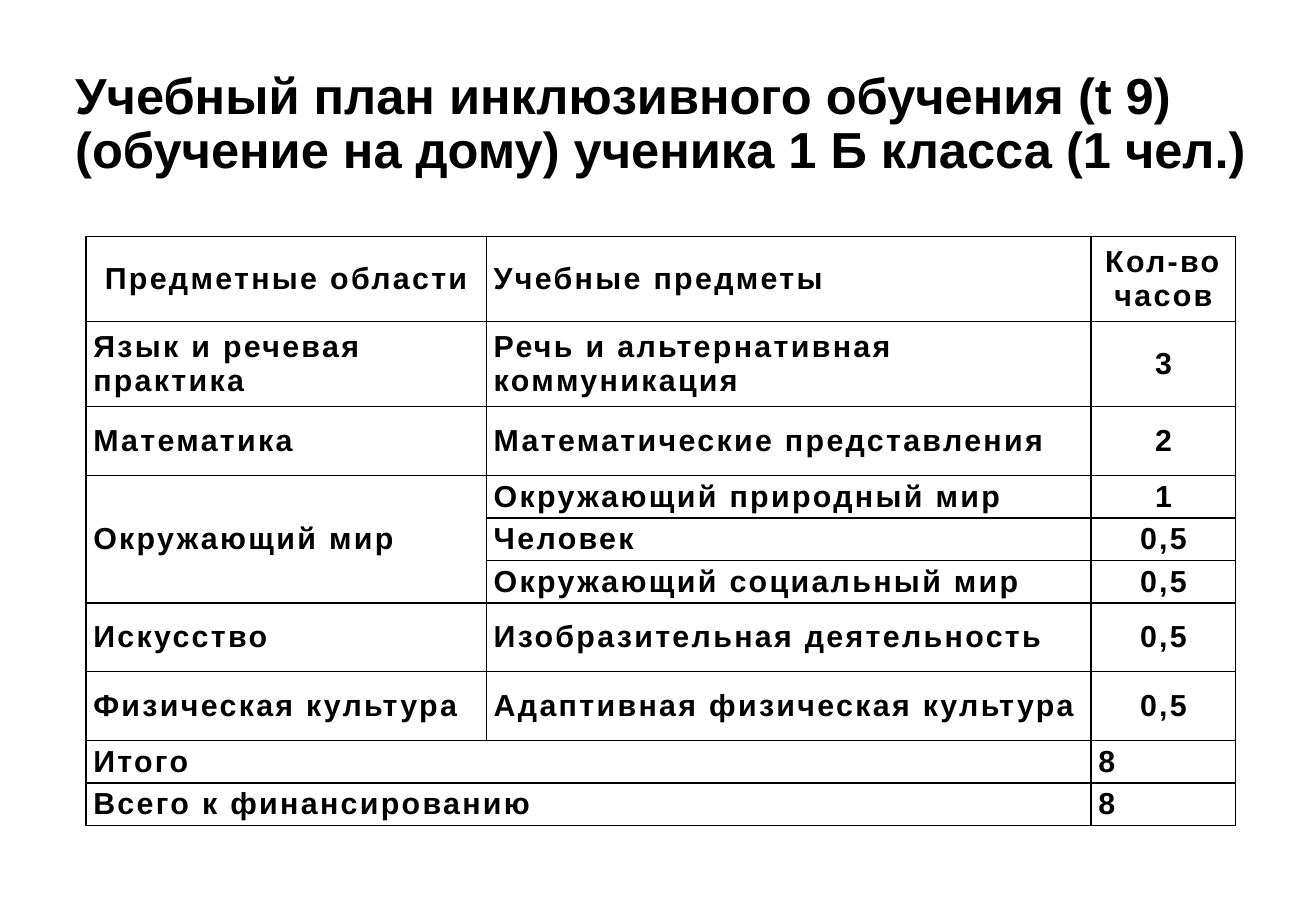
import dataclasses

import lxml.etree
import pptx
import pptx.dml.color
import pptx.enum.text
import pptx.oxml.ns
import pptx.util

Pt = pptx.util.Pt
Align = pptx.enum.text.PP_ALIGN
Anchor = pptx.enum.text.MSO_ANCHOR


@dataclasses.dataclass(frozen=True)
class Theme:
    font: str = "Arial"
    ink: str = "000000"
    title_size: float = 30
    cell_size: float = 18
    cell_spacing: float = 1.4
    cell_inset: float = 4.3
    border: float = 1


class PlanSlide:
    def __init__(self, deck, theme):
        self.theme = theme
        self.slide = deck.slides.add_slide(deck.slide_layouts[5])

    def add_text(self, paragraph, text, size, align):
        paragraph.alignment = align
        run = paragraph.add_run()
        run.text = text
        run.font.name = self.theme.font
        run.font.size = Pt(size)
        run.font.bold = True
        run.font.color.rgb = pptx.dml.color.RGBColor.from_string(self.theme.ink)
        return run

    def title(self, text, left, top, width, height):
        heading = self.slide.shapes.title
        heading.left, heading.top = Pt(left), Pt(top)
        heading.width, heading.height = Pt(width), Pt(height)
        frame = heading.text_frame
        frame.word_wrap = True
        frame.auto_size = pptx.enum.text.MSO_AUTO_SIZE.NONE
        frame.vertical_anchor = Anchor.MIDDLE
        frame.paragraphs[0].line_spacing = 0.9
        self.add_text(frame.paragraphs[0], text, self.theme.title_size, Align.LEFT)

    def outline(self, cell):
        properties = cell._tc.get_or_add_tcPr()
        for position, side in enumerate(("lnL", "lnR", "lnT", "lnB")):
            line = lxml.etree.Element(pptx.oxml.ns.qn(f"a:{side}"), w=str(Pt(self.theme.border)))
            fill = lxml.etree.SubElement(line, pptx.oxml.ns.qn("a:solidFill"))
            lxml.etree.SubElement(fill, pptx.oxml.ns.qn("a:srgbClr"), val=self.theme.ink)
            properties.insert(position, line)

    def format_cell(self, cell):
        cell.fill.background()
        cell.vertical_anchor = Anchor.MIDDLE
        cell.margin_left = cell.margin_right = Pt(self.theme.cell_inset)
        cell.margin_top = cell.margin_bottom = 0
        self.outline(cell)

    def table(self, left, top, widths, heights, rows, merges, centred):
        frame = self.slide.shapes.add_table(
            len(heights), len(widths), Pt(left), Pt(top), Pt(sum(widths)), Pt(sum(heights)))
        grid = frame.table
        grid.first_row = grid.horz_banding = False
        for column, width in zip(grid.columns, widths):
            column.width = Pt(width)
        for row, height in zip(grid.rows, heights):
            row.height = Pt(height)
        for r, row in enumerate(rows):
            for c, text in enumerate(row):
                cell = grid.cell(r, c)
                self.format_cell(cell)
                if text:
                    align = Align.CENTER if (r, c) in centred else Align.LEFT
                    run = self.add_text(cell.text_frame.paragraphs[0], text, self.theme.cell_size, align)
                    run._r.get_or_add_rPr().set("spc", str(round(self.theme.cell_spacing * 100)))
        for first, last in merges:
            grid.cell(*first).merge(grid.cell(*last))


def main():
    deck = pptx.Presentation()
    deck.slide_width, deck.slide_height = Pt(780), Pt(540)
    plan = PlanSlide(deck, Theme())
    plan.title(
        "Учебный план инклюзивного обучения (t 9) (обучение на дому) ученика 1 Б класса (1 чел.)",
        37.4, 28.8, 718, 90.7)

    subjects = [
        ("Предметные области", "Учебные предметы", "Кол-во часов"),
        ("Язык и речевая практика", "Речь и альтернативная коммуникация", "3"),
        ("Математика", "Математические представления", "2"),
        ("Окружающий мир", "Окружающий природный мир", "1"),
        ("", "Человек", "0,5"),
        ("", "Окружающий социальный мир", "0,5"),
        ("Искусство", "Изобразительная деятельность", "0,5"),
        ("Физическая культура", "Адаптивная физическая культура", "0,5"),
    ]
    totals = [("Итого", "", "8"), ("Всего к финансированию", "", "8")]
    two_line, single, compact = 50.4, 40.7, 25.25
    heights = [two_line] * 2 + [single] + [compact] * 3 + [single] * 2 + [compact] * 2
    centred = {(0, 0)} | {(r, 2) for r in range(len(subjects))}
    merges = [((3, 0), (5, 0)), ((8, 0), (8, 1)), ((9, 0), (9, 1))]
    plan.table(51, 140.3, [237.4, 358.4, 85.7], heights, subjects + totals, merges, centred)
    deck.save("out.pptx")


if __name__ == "__main__":
    main()
